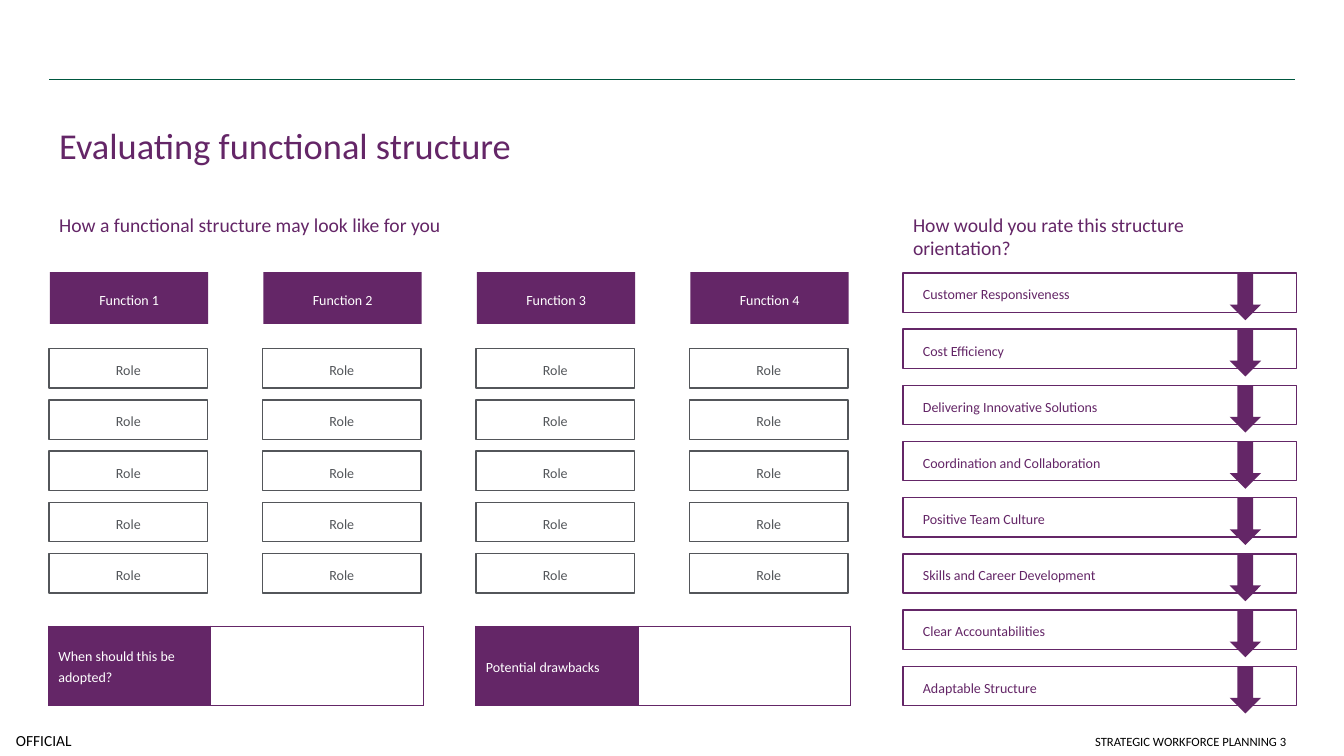
from lxml.etree import SubElement
from pptx import Presentation
from pptx.dml.color import RGBColor as Rgb
from pptx.enum.shapes import MSO_CONNECTOR as Link, MSO_SHAPE as Kind
from pptx.enum.text import MSO_ANCHOR as Anchor, PP_ALIGN as Align
from pptx.oxml.ns import qn
from pptx.util import Cm, Pt

HUES = {
    "plum": "642667",
    "green": "00573F",
    "grey": "53565A",
    "white": "FFFFFF",
    "black": "000000",
}
FONT = "Calibri"
TRAITS = [
    "Customer Responsiveness",
    "Cost Efficiency",
    "Delivering Innovative Solutions",
    "Coordination and Collaboration",
    "Positive Team Culture",
    "Skills and Career Development",
    "Clear Accountabilities",
    "Adaptable Structure",
]


def hue(name):
    return Rgb.from_string(HUES[name])


def write(frame, text, size=10, color="plum", align=Align.LEFT, space=None, after=None):
    para = frame.paragraphs[0]
    para.alignment = align
    para.line_spacing = space
    if after is not None:
        para.space_after = Pt(after)
    run = para.add_run()
    run.text = text
    run.font.name = FONT
    run.font.size = Pt(size)
    run.font.color.rgb = hue(color)


def set_frame(frame, anchor, pads):
    frame.word_wrap = True
    frame.vertical_anchor = anchor
    left, top, right, bottom = pads
    frame.margin_left, frame.margin_top = Cm(left), Cm(top)
    frame.margin_right, frame.margin_bottom = Cm(right), Cm(bottom)


def add_text(slide, area, text, anchor=Anchor.TOP, pads=(0.25, 0.13, 0.25, 0.13), **style):
    box = slide.shapes.add_textbox(*map(Cm, area))
    set_frame(box.text_frame, anchor, pads)
    write(box.text_frame, text, **style)


def add_box(slide, area, fill, line=None, text=None, kind=Kind.RECTANGLE, pad=0, **style):
    box = slide.shapes.add_shape(kind, *map(Cm, area))
    box.shadow.inherit = False
    box.fill.solid()
    box.fill.fore_color.rgb = hue(fill)
    if line:
        box.line.color.rgb = hue(line)
        box.line.width = Pt(1)
    else:
        box.line.fill.background()
    if text:
        set_frame(box.text_frame, Anchor.MIDDLE, (pad, 0, 0, 0))
        write(box.text_frame, text, space=1.2, after=9, **style)


def add_rule(slide, left, right, top):
    rule = slide.shapes.add_connector(Link.STRAIGHT, Cm(left), Cm(top), Cm(right), Cm(top))
    rule.line.color.rgb = hue("green")
    rule.line.width = Pt(1)
    SubElement(rule._element.spPr, qn("a:effectLst"))


def set_cell(cell, fill):
    props = cell._tc.get_or_add_tcPr()
    for side in ("lnL", "lnR", "lnT", "lnB"):
        edge = SubElement(props, qn(f"a:{side}"), w=str(Pt(0.5)))
        paint = SubElement(edge, qn("a:solidFill"))
        SubElement(paint, qn("a:srgbClr"), val=HUES["plum"])
    cell.fill.solid()
    cell.fill.fore_color.rgb = hue(fill)
    cell.vertical_anchor = Anchor.MIDDLE


def add_note(slide, left, text):
    widths = (4.09, 5.36)
    area = (left, 15.77, sum(widths), 2.01)
    table = slide.shapes.add_table(1, 2, *map(Cm, area)).table
    table.first_row = table.horz_banding = False
    for col, width in enumerate(widths):
        table.columns[col].width = Cm(width)
        set_cell(table.cell(0, col), ("plum", "white")[col])
    write(table.cell(0, 0).text_frame, text, color="white", space=1.2)


def add_column(slide, index):
    left = 1.24 + 5.38 * index
    add_box(slide, (left + 0.02, 6.86, 3.99, 1.3), "plum", text=f"Function {index + 1}",
            color="white", align=Align.CENTER)
    for row in range(5):
        add_box(slide, (left, 8.79 + 1.29 * row, 3.99, 0.99), "white", "grey", "Role",
                color="grey", align=Align.CENTER)


def add_trait(slide, index, text):
    top = 6.88 + 9.91 / 7 * index
    add_box(slide, (22.76, top, 9.91, 0.99), "white", "plum", text, pad=0.5)
    add_box(slide, (30.99, top, 0.79, 1.19), "plum", kind=Kind.DOWN_ARROW)


def main():
    deck = Presentation()
    deck.slide_width, deck.slide_height = Cm(33.87), Cm(19.05)
    slide = deck.slides.add_slide(deck.slide_layouts[6])

    add_rule(slide, 1.24, 32.64, 2)
    add_text(slide, (0, 18.26, 2.21, 0.79), "OFFICIAL", Anchor.MIDDLE, (0, 0, 0, 0),
             size=11, color="black", align=Align.CENTER)
    add_text(slide, (1.24, 2.26, 31.37, 2.59), "Evaluating functional structure",
             Anchor.MIDDLE, size=26, space=1.2)
    add_text(slide, (1.24, 5.23, 21.49, 2.31),
             "How a functional structure may look like for you", size=14)
    for index in range(4):
        add_column(slide, index)

    add_note(slide, 1.22, "When should this be adopted?")
    add_note(slide, 11.99, "Potential drawbacks")

    add_text(slide, (22.76, 5.23, 9.91, 1.63),
             "How would you rate this structure orientation?", size=14)
    for index, text in enumerate(TRAITS):
        add_trait(slide, index, text)

    add_text(slide, (17.37, 18.01, 15.29, 0.99), "STRATEGIC WORKFORCE PLANNING 3",
             Anchor.BOTTOM, size=9, color="black", align=Align.RIGHT)
    deck.save("out.pptx")


if __name__ == "__main__":
    main()
